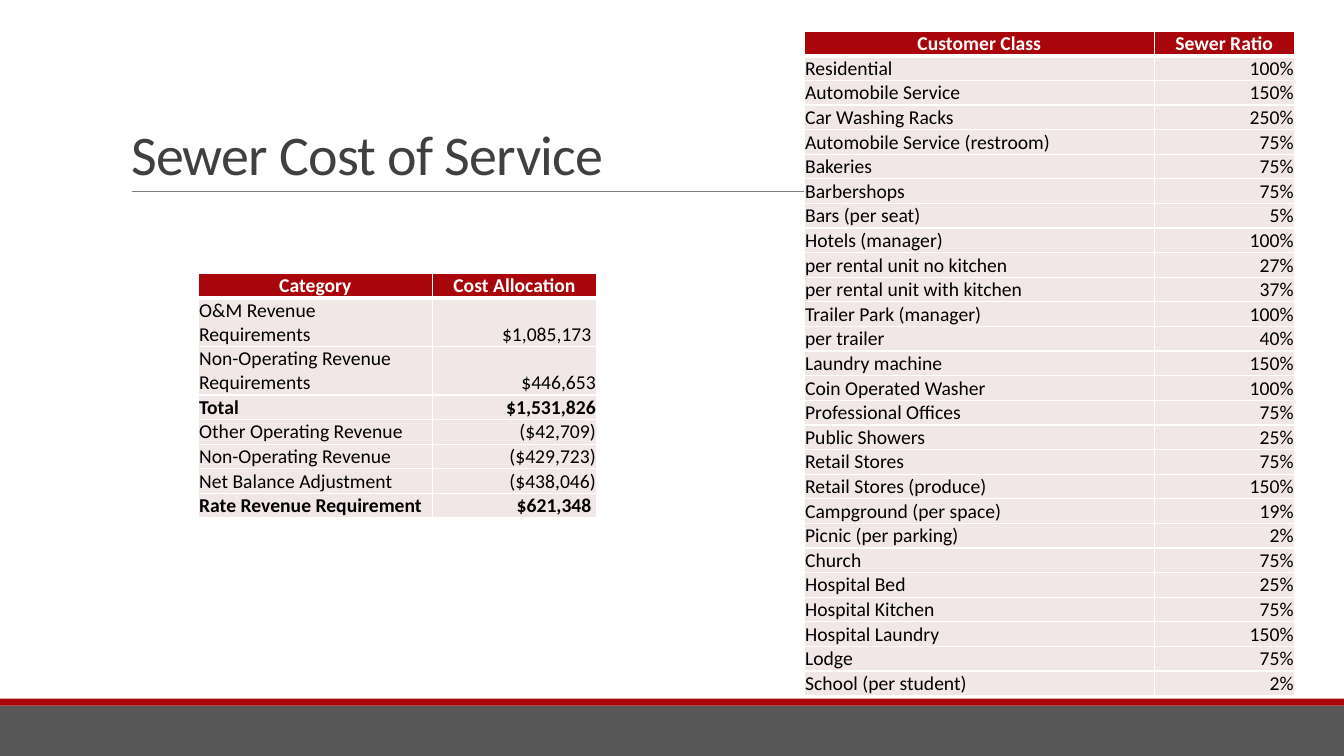
from pptx import Presentation
from pptx.util import Pt
from pptx.dml.color import RGBColor
from pptx.enum.shapes import MSO_SHAPE as Shape, MSO_CONNECTOR as Link
from pptx.enum.text import PP_ALIGN as Align, MSO_ANCHOR as Anchor, MSO_AUTO_SIZE as Fit
from pptx.oxml import parse_xml
from pptx.oxml.ns import nsdecls, qn
from lxml import etree

RED, DARK, PALE, WHITE = "A9060B", "585858", "F1E7E7", "FFFFFF"
LINE = 17.6  # height of a one-line row
TWO = 34.7   # height of a two-line row


def paint(color, code):
    color.rgb = RGBColor.from_string(code)


def style(para, size, code, bold=False):
    for key, val in {"name": "Calibri", "size": Pt(size), "bold": bold}.items():
        setattr(para.font, key, val)
    paint(para.font.color, code)


deck = Presentation()
deck.slide_width, deck.slide_height = Pt(960), Pt(540)
slide = deck.slides.add_slide(deck.slide_layouts[5])
shapes = slide.shapes

# Footer bars
for top, high, code in [(504, 36, DARK), (499, 5, RED)]:
    bar = shapes.add_shape(Shape.RECTANGLE, 0, Pt(top), Pt(960), Pt(high))
    bar.shadow.inherit = False
    bar.fill.solid()
    paint(bar.fill.fore_color, code)
    bar.line.fill.background()

# Rule under the title
rule = shapes.add_connector(Link.STRAIGHT, Pt(94.3), Pt(136.8), Pt(879), Pt(136.8))
rule.line.width = Pt(0.5)
paint(rule.line.color, "808080")
etree.SubElement(rule._element.spPr, qn("a:effectLst"))

# Title
title = shapes.title
for key, val in {"left": 86.4, "top": 22.3, "width": 792, "height": 114.5}.items():
    setattr(title, key, Pt(val))
frame = title.text_frame
frame.text = "Sewer Cost of Service"
frame.auto_size = Fit.NONE
frame.vertical_anchor = Anchor.BOTTOM
head = frame.paragraphs[0]
head.alignment = Align.LEFT
head.line_spacing = 0.85
style(head, 40, "404040")
head.runs[0].font._element.set("spc", "-50")

# Table contents
costs = [
    ("Category", "Cost Allocation"),
    ("O&M Revenue Requirements", "$1,085,173 "),
    ("Non-Operating Revenue Requirements", "$446,653"),
    ("Total", "$1,531,826"),
    ("Other Operating Revenue", "($42,709)"),
    ("Non-Operating Revenue", "($429,723)"),
    ("Net Balance Adjustment", "($438,046)"),
    ("Rate Revenue Requirement", "$621,348 "),
]
ratios = [
    ("Customer Class", "Sewer Ratio"),
    ("Residential", "100%"),
    ("Automobile Service", "150%"),
    ("Car Washing Racks", "250%"),
    ("Automobile Service (restroom)", "75%"),
    ("Bakeries", "75%"),
    ("Barbershops", "75%"),
    ("Bars (per seat)", "5%"),
    ("Hotels (manager)", "100%"),
    ("per rental unit no kitchen", "27%"),
    ("per rental unit with kitchen", "37%"),
    ("Trailer Park (manager)", "100%"),
    ("per trailer", "40%"),
    ("Laundry machine", "150%"),
    ("Coin Operated Washer", "100%"),
    ("Professional Offices", "75%"),
    ("Public Showers", "25%"),
    ("Retail Stores", "75%"),
    ("Retail Stores (produce)", "150%"),
    ("Campground (per space)", "19%"),
    ("Picnic (per parking)", "2%"),
    ("Church", "75%"),
    ("Hospital Bed", "25%"),
    ("Hospital Kitchen", "75%"),
    ("Hospital Laundry", "150%"),
    ("Lodge", "75%"),
    ("School (per student)", "2%"),
]
tall = ("O&M Revenue Requirements", "Non-Operating Revenue Requirements")
sums = ("Total", "Rate Revenue Requirement")

# Tables
for rows, left, top, wides in [(costs, 141.8, 195.1, (167, 117.4)),
                               (ratios, 574.6, 22.3, (249.8, 100.1))]:
    highs = [TWO if row[0] in tall else LINE for row in rows]
    grid = shapes.add_table(len(rows), 2, Pt(left), Pt(top),
                            Pt(sum(wides)), Pt(sum(highs))).table
    grid.horz_banding = False
    for col, wide in zip(grid.columns, wides):
        col.width = Pt(wide)
    for r, row in enumerate(rows):
        grid.rows[r].height = Pt(highs[r])
        for c, text in enumerate(row):
            cell = grid.cell(r, c)
            cell.text = text
            for key, val in {"margin_left": Pt(0.5), "margin_right": Pt(0.5),
                             "margin_top": Pt(0.5), "margin_bottom": 0,
                             "vertical_anchor": Anchor.BOTTOM}.items():
                setattr(cell, key, val)
            para = cell.text_frame.paragraphs[0]
            para.alignment = Align.CENTER if r == 0 else (Align.LEFT, Align.RIGHT)[c]
            style(para, 14, "000000" if r else WHITE, r == 0 or row[0] in sums)
            # White borders, thick between header and body
            for side in "LRTB":
                thick = (r, side) in ((0, "B"), (1, "T"))
                cell._tc.get_or_add_tcPr().append(parse_xml(
                    f'<a:ln{side} {nsdecls("a")} w="{Pt(3 if thick else 1)}"><a:solidFill>'
                    f'<a:srgbClr val="{WHITE}"/></a:solidFill></a:ln{side}>'))
            cell.fill.solid()
            paint(cell.fill.fore_color, PALE if r else RED)

deck.save("out.pptx")
